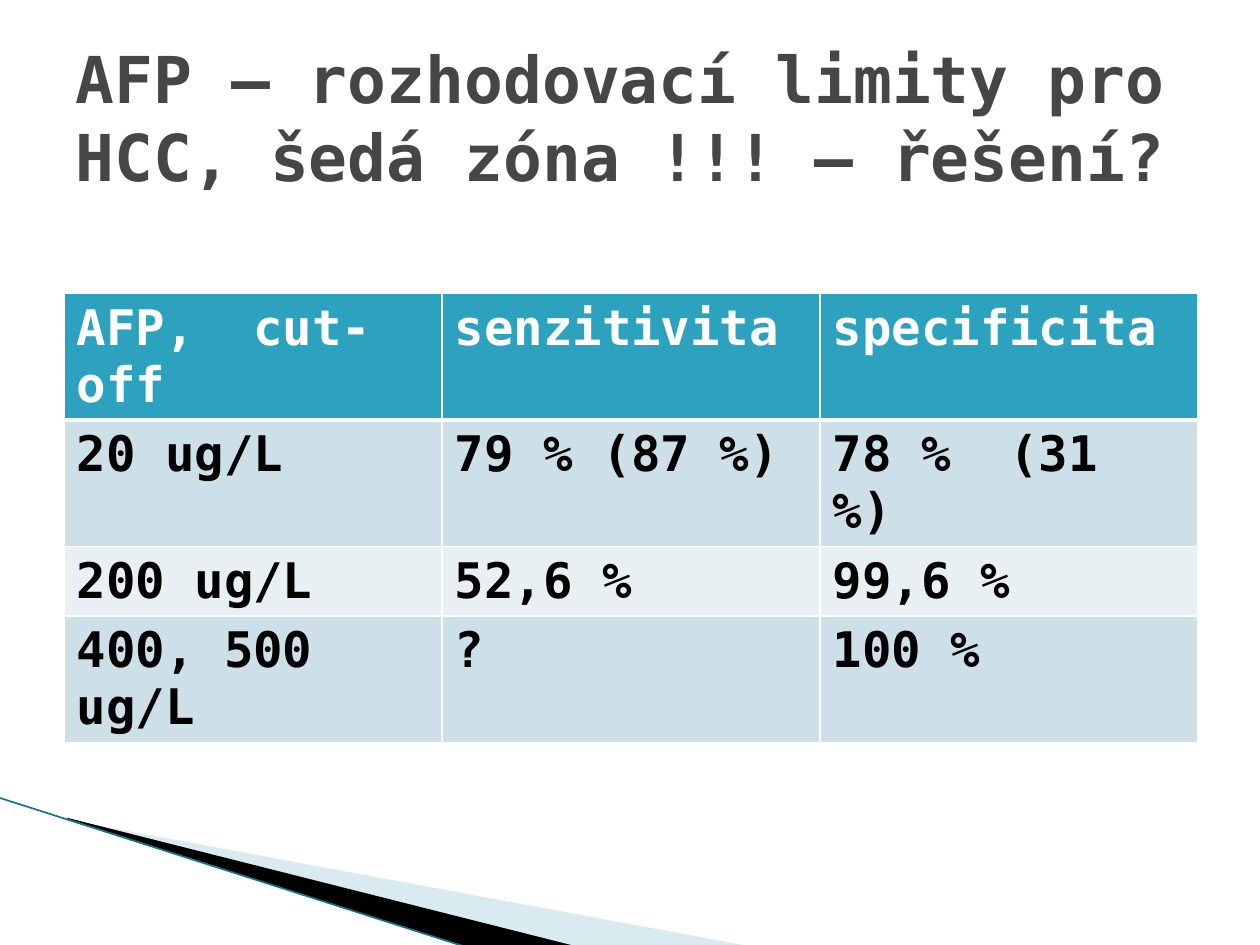
from lxml import etree
from pptx import Presentation
from pptx.dml.color import RGBColor
from pptx.enum import text
from pptx.oxml.ns import qn
from pptx.util import Inches, Pt
from pptx.enum import shapes

FONT = "DejaVu Sans Mono"
COLORS = {
    "title": "464646",
    "header": "2DA2BF",
    "band_dark": "CDE0E8",
    "band_light": "E8F0F4",
    "white": "FFFFFF",
    "black": "000000",
    "sweep": "A0CBDC",
    "edge": "16738A",
}
ROWS = [
    ["AFP,  cut-off", "senzitivita", "specificita"],
    ["20 ug/L", "79 % (87 %)", "78 %  (31 %)"],
    ["200 ug/L", "52,6 %", "99,6 %"],
    ["400, 500 ug/L", "?", "100 %"],
]


def color(name):
    return RGBColor.from_string(COLORS[name])


def write(frame, words, size=28, fill="black", bold=True):
    paragraph = frame.paragraphs[0]
    paragraph.alignment = text.PP_ALIGN.LEFT
    run = paragraph.add_run()
    run.text = words
    run.font.name = FONT
    run.font.size = Pt(size)
    run.font.bold = bold
    run.font.color.rgb = color(fill)


def set_borders(cell, widths):
    """Draw white borders; widths maps each side (L, R, T, B) to points."""
    properties = cell._tc.get_or_add_tcPr()
    for position, (side, width) in enumerate(widths.items()):
        line = etree.Element(qn(f"a:ln{side}"), w=str(Pt(width)))
        solid = etree.SubElement(line, qn("a:solidFill"))
        etree.SubElement(solid, qn("a:srgbClr"), val=COLORS["white"])
        properties.insert(position, line)


class SlideBuilder:
    def __init__(self, presentation):
        self.slide = presentation.slides.add_slide(presentation.slide_layouts[5])

    def title(self, words, left, top, width, height):
        title = self.slide.shapes.title
        title.left, title.top = Inches(left), Inches(top)
        title.width, title.height = Inches(width), Inches(height)
        frame = title.text_frame
        frame.word_wrap = True
        frame.auto_size = text.MSO_AUTO_SIZE.NONE
        frame.vertical_anchor = text.MSO_ANCHOR.MIDDLE
        write(frame, words, size=36.9, fill="title")

    def polygon(self, points, fill, opacity=100):
        start, *others = [(Inches(x), Inches(y)) for x, y in points]
        builder = self.slide.shapes.build_freeform(*start)
        builder.add_line_segments(others, close=True)
        shape = builder.convert_to_shape()
        shape.shadow.inherit = False
        shape.fill.solid()
        shape.fill.fore_color.rgb = color(fill)
        shape.line.fill.background()
        if opacity < 100:
            tint = shape._element.spPr.find(".//" + qn("a:srgbClr"))
            etree.SubElement(tint, qn("a:alpha"), val=str(opacity * 1000))

    def line(self, start, end, stroke, width):
        connector = self.slide.shapes.add_connector(
            shapes.MSO_CONNECTOR.STRAIGHT, *map(Inches, start + end))
        connector.line.color.rgb = color(stroke)
        connector.line.width = Pt(width)
        etree.SubElement(connector._element.spPr, qn("a:effectLst"))

    def table(self, rows, left, top, column_width, row_height):
        count = len(rows[0])
        table = self.slide.shapes.add_table(
            len(rows), count, Inches(left), Inches(top),
            Inches(column_width * count), Inches(row_height * len(rows))).table
        for row_index, values in enumerate(rows):
            header = row_index == 0
            band = "band_dark" if row_index % 2 else "band_light"
            widths = {"L": 1, "R": 1, "T": 3 if row_index == 1 else 1, "B": 3 if header else 1}
            for column_index, value in enumerate(values):
                cell = table.cell(row_index, column_index)
                cell.fill.solid()
                cell.fill.fore_color.rgb = color("header" if header else band)
                set_borders(cell, widths)
                write(cell.text_frame, value, fill="white" if header else "black")


def main():
    presentation = Presentation()
    presentation.slide_width, presentation.slide_height = Inches(10), Inches(7.5)
    builder = SlideBuilder(presentation)
    builder.polygon([(0.55, 6.51), (5.95, 7.51), (4.56, 7.51), (0.55, 6.5)], "sweep", opacity=40)
    builder.polygon([(0.53, 6.49), (4.57, 7.51), (3.72, 7.52), (0.54, 6.5)], "black")
    builder.line((-0.01, 6.33), (3.71, 7.52), "edge", 0.95)
    builder.table(ROWS, 0.51, 2.33, column_width=3, row_height=0.41)
    builder.title("AFP – rozhodovací limity pro HCC, šedá zóna !!! – řešení?", 0.5, 0.3, 9, 1.25)
    presentation.save("out.pptx")


if __name__ == "__main__":
    main()
